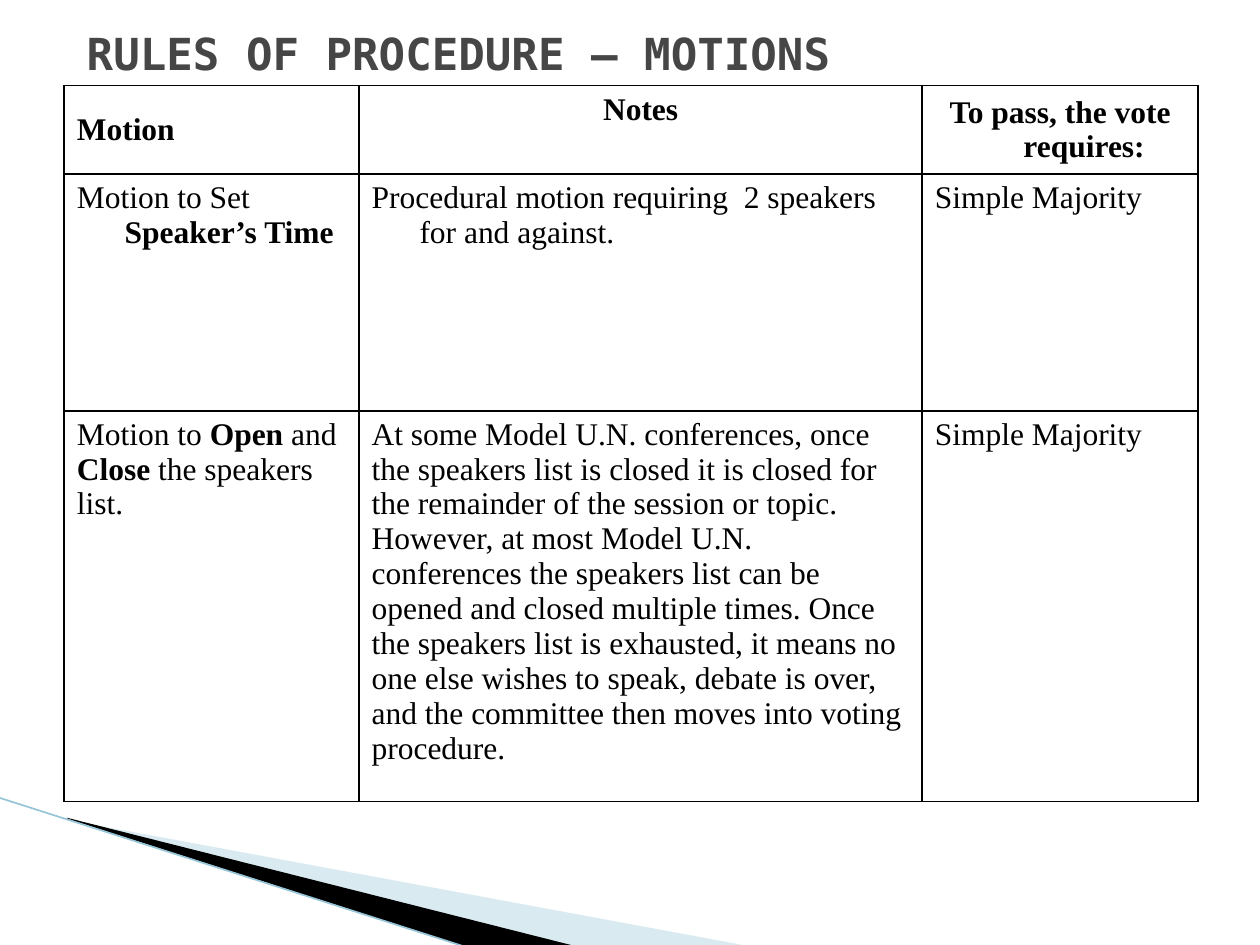
from lxml import etree
from pptx import Presentation
from pptx import util as u
from pptx.dml.color import RGBColor
from pptx.enum import shapes, text
from pptx.oxml import ns

BLACK = RGBColor(0x00, 0x00, 0x00)
GREY = RGBColor(0x46, 0x46, 0x46)
PALE_BLUE = RGBColor(0xA0, 0xCB, 0xDC)
EDGE_BLUE = RGBColor(0x97, 0xC5, 0xD8)

TITLE_FONT = {"name": "DejaVu Sans Mono", "size": u.Pt(25.2), "bold": True}
CELL_FONT = {"name": "Times New Roman", "size": u.Pt(18)}
HANGING = u.Inches(0.38)
MIDDLE = text.MSO_ANCHOR.MIDDLE
CENTER = text.PP_ALIGN.CENTER

COLUMN_WIDTHS = (2.34, 4.47, 2.19)
ROW_HEIGHTS = (0.66, 1.88, 2.87)

# Each cell: its runs as (wording, bold), then its paragraph settings
CELLS = [
    [
        ([("Motion", True)], {"anchor": MIDDLE, "hanging": True}),
        ([("Notes", True)], {"align": CENTER}),
        ([("To pass, the vote requires:", True)],
         {"anchor": MIDDLE, "align": CENTER, "hanging": True}),
    ],
    [
        ([("Motion to Set", False), (" Speaker’s Time", True)], {"hanging": True}),
        ([("Procedural motion requiring  2 speakers for and against.", False)],
         {"hanging": True}),
        ([("Simple Majority", False)], {"hanging": True}),
    ],
    [
        ([("Motion to ", False), ("Open", True), (" and ", False),
          ("Close ", True), ("the speakers list.", False)], {}),
        ([("At some Model U.N. conferences, once the speakers list is closed it is "
           "closed for the remainder of the session or topic. However, at most Model "
           "U.N. conferences the speakers list can be opened and closed multiple "
           "times. Once the speakers list is exhausted, it means no one else wishes "
           "to speak, debate is over, and the committee then moves into voting "
           "procedure.", False)], {}),
        ([("Simple Majority", False)], {}),
    ],
]


def add_run(paragraph, wording, color, values):
    run = paragraph.add_run()
    run.text = wording
    for name, value in values.items():
        setattr(run.font, name, value)
    run.font.color.rgb = color


def add_wedge(slide, left, top, points, color, opacity=None):
    """Filled outline; points are offsets in inches from left, top."""
    corners = [(u.Inches(left + x), u.Inches(top + y)) for x, y in points]
    builder = slide.shapes.build_freeform(*corners[0])
    builder.add_line_segments(corners[1:], close=True)
    wedge = builder.convert_to_shape()
    wedge.shadow.inherit = False
    wedge.fill.solid()
    wedge.fill.fore_color.rgb = color
    wedge.line.fill.background()
    if opacity is not None:
        fill_color = wedge.fill._xPr.find(".//" + ns.qn("a:srgbClr"))
        alpha = etree.SubElement(fill_color, ns.qn("a:alpha"))
        alpha.set("val", str(opacity * 1000))


def add_corner(slide, left, top):
    """Sweeping decoration at the bottom left."""
    add_wedge(slide, left + 0.56, top + 0.17,
              [(0, 0.01), (5.4, 1.01), (4.01, 1.01), (0, 0)], PALE_BLUE, 40)
    add_wedge(slide, left + 0.54, top + 0.16,
              [(0, 0), (4.04, 1.02), (3.19, 1.03), (0.01, 0.01)], BLACK)
    edge = slide.shapes.add_connector(
        shapes.MSO_CONNECTOR.STRAIGHT, u.Inches(left), u.Inches(top),
        u.Inches(left + 3.72), u.Inches(top + 1.19))
    edge.line.color.rgb = EDGE_BLUE
    edge.line.width = u.Pt(0.95)
    etree.SubElement(edge._element.spPr, ns.qn("a:effectLst"))


def add_title(slide, left, top, width, height):
    box = slide.shapes.add_textbox(*map(u.Inches, (left, top, width, height)))
    frame = box.text_frame
    frame.word_wrap = True
    frame.vertical_anchor = MIDDLE
    add_run(frame.paragraphs[0], "RULES OF PROCEDURE – MOTIONS", GREY, TITLE_FONT)


def add_borders(cell):
    properties = cell._tc.get_or_add_tcPr()
    for side in ("lnL", "lnR", "lnT", "lnB"):
        line = etree.SubElement(properties, ns.qn("a:" + side), w=str(u.Pt(1)))
        fill = etree.SubElement(line, ns.qn("a:solidFill"))
        etree.SubElement(fill, ns.qn("a:srgbClr"), val=str(BLACK))


def fill_cell(cell, runs, anchor=text.MSO_ANCHOR.TOP, align=None, hanging=False):
    add_borders(cell)
    cell.fill.background()
    cell.vertical_anchor = anchor
    paragraph = cell.text_frame.paragraphs[0]
    paragraph.alignment = align
    if hanging:
        properties = paragraph._p.get_or_add_pPr()
        properties.set("marL", str(HANGING))
        properties.set("indent", str(-HANGING))
    for wording, bold in runs:
        add_run(paragraph, wording, BLACK, {**CELL_FONT, "bold": bold})


def add_motions_table(slide, left, top):
    size = (sum(COLUMN_WIDTHS), sum(ROW_HEIGHTS))
    table = slide.shapes.add_table(
        len(ROW_HEIGHTS), len(COLUMN_WIDTHS),
        *map(u.Inches, (left, top, *size))).table
    table.first_row = table.horz_banding = False
    for column, width in zip(table.columns, COLUMN_WIDTHS):
        column.width = u.Inches(width)
    for row, height, contents in zip(table.rows, ROW_HEIGHTS, CELLS):
        row.height = u.Inches(height)
        for cell, (runs, settings) in zip(row.cells, contents):
            fill_cell(cell, runs, **settings)


def main():
    presentation = Presentation()
    presentation.slide_width = u.Inches(10)
    presentation.slide_height = u.Inches(7.5)
    slide = presentation.slides.add_slide(presentation.slide_layouts[6])
    add_corner(slide, -0.01, 6.33)
    add_title(slide, 0.59, 0.21, 9, 0.42)
    add_motions_table(slide, 0.51, 0.68)
    presentation.save("out.pptx")


if __name__ == "__main__":
    main()
